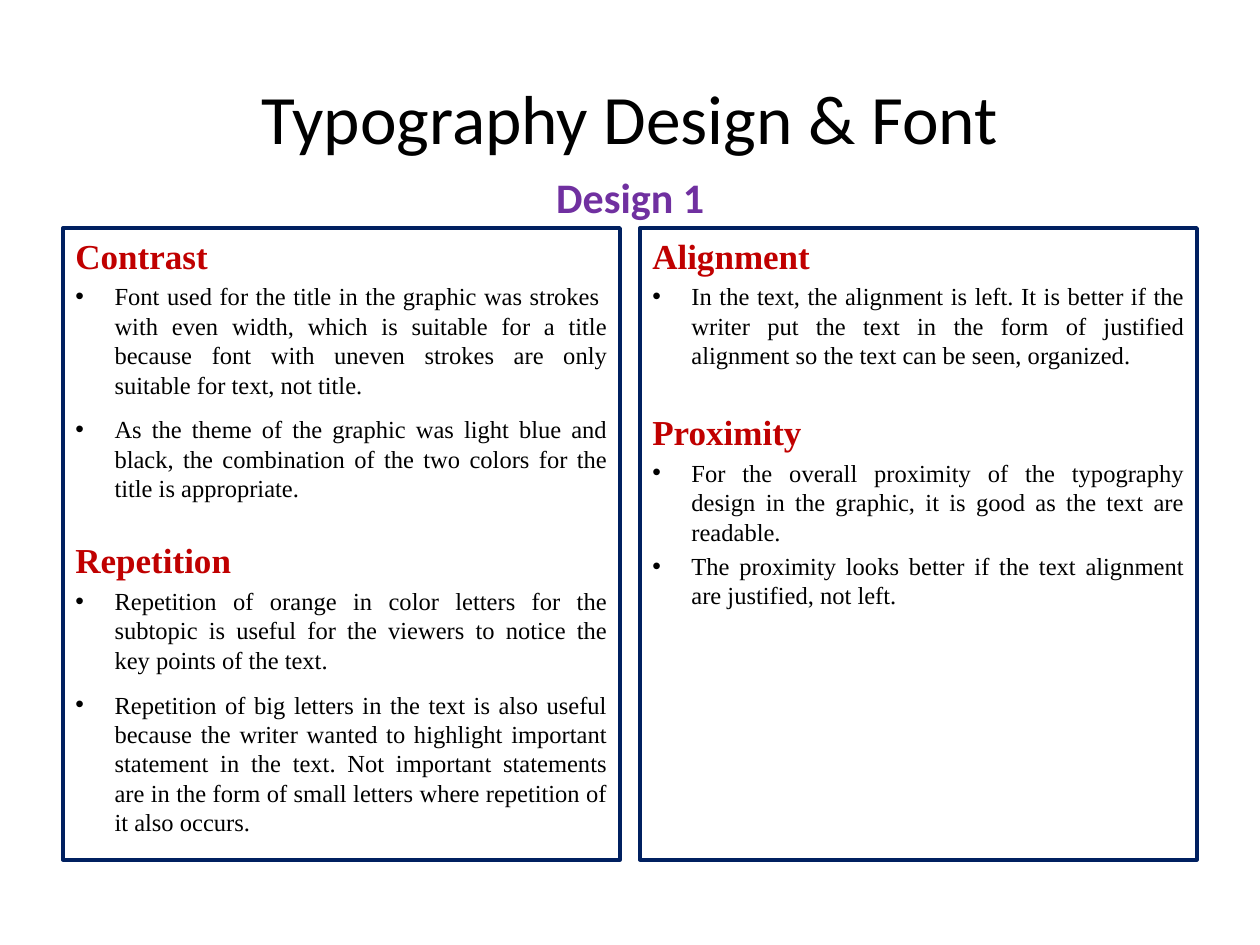
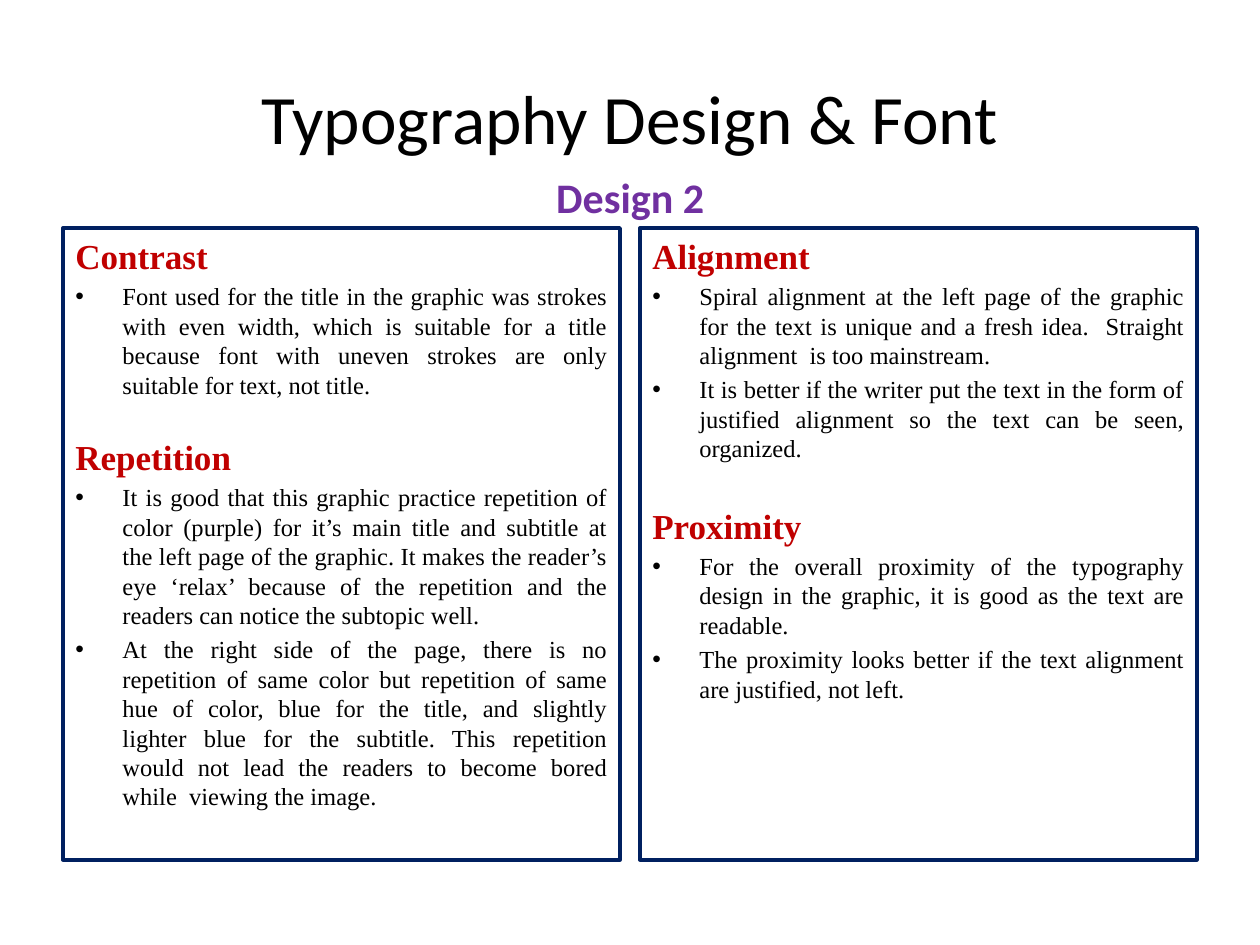
from dataclasses import dataclass

from lxml import etree
from pptx import Presentation
from pptx.dml.color import RGBColor
from pptx.enum.shapes import MSO_SHAPE
from pptx.enum.text import MSO_ANCHOR, MSO_AUTO_SIZE, PP_ALIGN
from pptx.oxml.ns import qn
from pptx.util import Cm, Pt

RECTANGLE = MSO_SHAPE.RECTANGLE
TOP, MIDDLE = MSO_ANCHOR.TOP, MSO_ANCHOR.MIDDLE
NO_AUTOFIT = MSO_AUTO_SIZE.NONE
LEFT, CENTER, JUSTIFY = PP_ALIGN.LEFT, PP_ALIGN.CENTER, PP_ALIGN.JUSTIFY

TITLE_ONLY = 5
SANS, SERIF = "Calibri", "Times New Roman"
BLACK, RED, PURPLE, NAVY = "000000", "C00000", "7030A0", "002060"

# Left, top, width and height in centimetres
TITLE_BOX = (1.27, 0.76, 22.86, 3.18)
SUBTITLE_BOX = (1.3, 3.33, 22.81, 1.27)
COLUMNS_BOX = (1.27, 4.6, 22.86, 12.73)
COLUMN_GAP = 0.4
BULLET_SPACE = 2.8


@dataclass
class Column:
    sections: dict
    section_space: float
    bullet_space: float = BULLET_SPACE


@dataclass
class Review:
    subtitle: str
    indent: float
    columns: list


PROXIMITY = [
    "For the overall proximity of the typography design in the graphic, "
    "it is good as the text are readable.",
    "The proximity looks better if the text alignment are justified, not left.",
]

REVIEWS = [
    Review("Design 1", 0.79, [
        Column({
            "Contrast": [
                "Font used for the title in the graphic was strokes  with even "
                "width, which is suitable for a title because font with uneven "
                "strokes are only suitable for text, not title.",
                "As the theme of the graphic was light blue and black, the "
                "combination of the two colors for the title is appropriate.",
            ],
            "Repetition": [
                "Repetition of orange in color letters for the subtopic is useful "
                "for the viewers to notice the key points of the text.",
                "Repetition of big letters in the text is also useful because the "
                "writer wanted to highlight important statement in the text. Not "
                "important statements are in the form of small letters where "
                "repetition of it also occurs.",
            ],
        }, section_space=20.8, bullet_space=8.8),
        Column({
            "Alignment": [
                "In the text, the alignment is left. It is better if the writer "
                "put the text in the form of justified alignment so the text can "
                "be seen, organized.",
            ],
            "Proximity": PROXIMITY,
        }, section_space=23.6),
    ]),
    Review("Design 2", 0.95, [
        Column({
            "Contrast": [
                "Font used for the title in the graphic was strokes with even "
                "width, which is suitable for a title because font with uneven "
                "strokes are only suitable for text, not title.",
            ],
            "Repetition": [
                "It is good that this graphic practice repetition of color "
                "(purple) for it’s main title and subtitle at the left page of "
                "the graphic. It makes the reader’s eye ‘relax’ because of the "
                "repetition and the readers can notice the subtopic well.",
                "At the right side of the page, there is no repetition of same "
                "color but repetition of same hue of color, blue for the title, "
                "and slightly lighter blue for the subtitle. This repetition "
                "would not lead the readers to become bored while  viewing the "
                "image.",
            ],
        }, section_space=20.8),
        Column({
            "Alignment": [
                "Spiral alignment at the left page of the graphic for the text is "
                "unique and a fresh idea.  Straight alignment  is too mainstream.",
                "It is better if the writer put the text in the form of justified "
                "alignment so the text can be seen, organized.",
            ],
            "Proximity": PROXIMITY,
        }, section_space=23.6),
    ]),
]


def color(value):
    return RGBColor.from_string(value)


def style(para, font, size, fill, bold=False, align=LEFT, before=0):
    para.alignment = align
    para.space_before = Pt(before)
    para.font.name = font
    para.font.size = Pt(size)
    para.font.bold = bold
    para.font.color.rgb = color(fill)


def add_bullet(para, indent):
    properties = para._p.get_or_add_pPr()
    properties.set("marL", str(Cm(indent)))
    properties.set("indent", str(-Cm(indent)))
    etree.SubElement(properties, qn("a:buFont"), typeface="Arial")
    etree.SubElement(properties, qn("a:buChar"), char="•")


def place_title(page, box):
    title = page.shapes.title
    title.left, title.top, title.width, title.height = map(Cm, box)
    frame = title.text_frame
    frame.text = "Typography Design & Font"
    frame.auto_size = NO_AUTOFIT
    frame.vertical_anchor = MIDDLE
    style(frame.paragraphs[0], SANS, 39.6, BLACK, align=CENTER)


def add_subtitle(page, box, text):
    frame = page.shapes.add_textbox(*map(Cm, box)).text_frame
    frame.word_wrap = True
    frame.text = text
    style(frame.paragraphs[0], SANS, 24, PURPLE, bold=True, align=CENTER)


def add_column(page, box, column, indent):
    panel = page.shapes.add_shape(RECTANGLE, *map(Cm, box))
    panel.shadow.inherit = False
    panel.fill.background()
    panel.line.color.rgb = color(NAVY)
    panel.line.width = Pt(2.25)
    frame = panel.text_frame
    frame.word_wrap = True
    frame.vertical_anchor = TOP

    for section, (heading, bullets) in enumerate(column.sections.items()):
        para = frame.add_paragraph() if section else frame.paragraphs[0]
        para.text = heading
        style(para, SERIF, 20, RED, bold=True,
              before=column.section_space if section else 0)
        for number, text in enumerate(bullets):
            para = frame.add_paragraph()
            para.text = text
            add_bullet(para, indent)
            style(para, SERIF, 14, BLACK, align=JUSTIFY,
                  before=column.bullet_space if number else BULLET_SPACE)


def add_columns(page, box, columns, indent):
    left, top, total, height = box
    width = (total - COLUMN_GAP * (len(columns) - 1)) / len(columns)
    for index, column in enumerate(columns):
        column_left = left + index * (width + COLUMN_GAP)
        add_column(page, (column_left, top, width, height), column, indent)


def add_review(deck, review):
    page = deck.slides.add_slide(deck.slide_layouts[TITLE_ONLY])
    place_title(page, TITLE_BOX)
    add_columns(page, COLUMNS_BOX, review.columns, review.indent)
    add_subtitle(page, SUBTITLE_BOX, review.subtitle)


def main():
    deck = Presentation()
    deck.slide_width, deck.slide_height = Cm(25.4), Cm(19.05)
    for review in REVIEWS:
        add_review(deck, review)
    deck.save("out.pptx")


if __name__ == "__main__":
    main()
